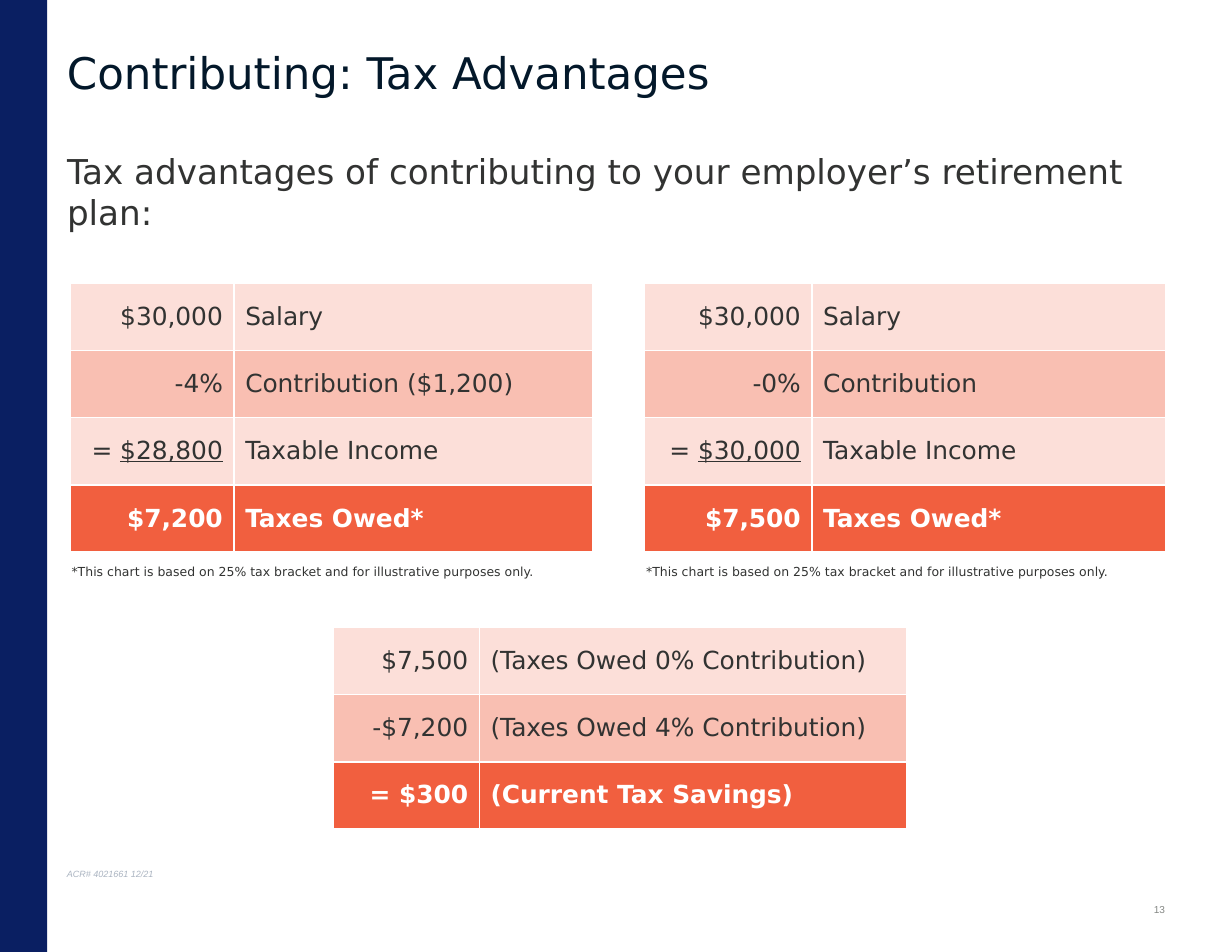
from lxml.etree import SubElement
from pptx import Presentation
from pptx.dml.color import RGBColor
from pptx.enum.shapes import MSO_SHAPE
from pptx.enum.text import MSO_ANCHOR, PP_ALIGN
from pptx.oxml.ns import qn
from pptx.util import Inches, Pt

NAVY = RGBColor(0x0A, 0x1F, 0x62)
INK = RGBColor(0x03, 0x18, 0x2A)
CHARCOAL = RGBColor(0x32, 0x33, 0x32)
GRAY = RGBColor(0x83, 0x86, 0x83)
MIST = RGBColor(0xAA, 0xB4, 0xC1)
WHITE = RGBColor(0xFF, 0xFF, 0xFF)
CORAL = RGBColor(0xF1, 0x5F, 0x3F)
BANDS = [RGBColor(0xFC, 0xDF, 0xD9), RGBColor(0xF9, 0xBF, 0xB2)]
SANS, SMALL_FONT = "DejaVu Sans", "Arial"

SLIDE_WIDTH, SLIDE_HEIGHT = 11, 8.5
BAR_WIDTH = 0.42
MARGIN = 0.5
ROW_HEIGHT = 0.6
TOP_ROW, BOTTOM_ROW, NOTE_ROW = 2.53, 5.6, 4.99

FOOTNOTE = "*This chart is based on 25% tax bracket and for illustrative purposes only."
NOTE_FORMAT = {"name": SANS, "size": Pt(8), "color": CHARCOAL}

# text, (left, top, width, height), font, anchor, paragraph format
TEXTS = [
    ("Contributing: Tax Advantages", (MARGIN, 0.46, 10, 0.42),
     {"name": SANS, "size": Pt(28), "color": INK}, MSO_ANCHOR.MIDDLE, {"line_spacing": 0.9}),
    ("Tax advantages of contributing to your employer’s retirement plan:",
     (MARGIN, 1.29, 9.95, 0.84),
     {"name": SANS, "size": Pt(22), "color": CHARCOAL}, MSO_ANCHOR.TOP, {}),
    (FOOTNOTE, (0.54, NOTE_ROW, 4.75, 0.24), NOTE_FORMAT, MSO_ANCHOR.TOP, {}),
    (FOOTNOTE, (5.67, NOTE_ROW, 4.75, 0.24), NOTE_FORMAT, MSO_ANCHOR.TOP, {}),
    ("ACR# 4021661 12/21", (MARGIN, 7.57, 10, 0.33),
     {"name": SMALL_FONT, "size": Pt(5.8), "color": MIST, "italic": True},
     MSO_ANCHOR.BOTTOM, {}),
    ("13", (10, 7.93, 0.5, 0.38),
     {"name": SMALL_FONT, "size": Pt(6.5), "color": GRAY},
     MSO_ANCHOR.MIDDLE, {"alignment": PP_ALIGN.RIGHT}),
]

# Each row: amount as (text, underlined) runs, then its label; the last row is the total
TABLES = [
    {"at": (0.63, TOP_ROW), "columns": (1.46, 3.2), "rows": [
        ([("$30,000", False)], "Salary"),
        ([("-4%", False)], "Contribution ($1,200)"),
        ([("= ", False), ("$28,800", True)], "Taxable Income"),
        ([("$7,200", False)], "Taxes Owed*")]},
    {"at": (5.75, TOP_ROW), "columns": (1.5, 3.16), "rows": [
        ([("$30,000", False)], "Salary"),
        ([("-0%", False)], "Contribution"),
        ([("= ", False), ("$30,000", True)], "Taxable Income"),
        ([("$7,500", False)], "Taxes Owed*")]},
    {"at": (2.98, BOTTOM_ROW), "columns": (1.3, 3.82), "rows": [
        ([("$7,500", False)], "(Taxes Owed 0% Contribution)"),
        ([("-$7,200", False)], "(Taxes Owed 4% Contribution)"),
        ([("= $300", False)], "(Current Tax Savings)")]},
]


def set_font(font, formats):
    for name, value in formats.items():
        if name == "color":
            font.color.rgb = value
        else:
            setattr(font, name, value)


def add_text(page, text, place, font, anchor, paragraph_format):
    box = page.shapes.add_textbox(*map(Inches, place))
    frame = box.text_frame
    frame.word_wrap = True
    frame.vertical_anchor = anchor
    para = frame.paragraphs[0]
    for name, value in paragraph_format.items():
        setattr(para, name, value)
    span = para.add_run()
    span.text = text
    set_font(span.font, font)


def set_borders(cell, widths):
    """Draw white cell edges; they must come before the fill in the cell's XML."""
    properties = cell._tc.get_or_add_tcPr()
    for position, (side, width) in enumerate(widths.items()):
        line = SubElement(properties, qn(f"a:ln{side}"), w=str(Pt(width)))
        color = SubElement(SubElement(line, qn("a:solidFill")), qn("a:srgbClr"))
        color.set("val", str(WHITE))
        properties.insert(position, line)


def fill_cell(cell, runs, alignment, is_total):
    cell.vertical_anchor = MSO_ANCHOR.MIDDLE
    para = cell.text_frame.paragraphs[0]
    para.alignment = alignment
    for text, underlined in runs:
        span = para.add_run()
        span.text = text
        set_font(span.font, {"name": SANS, "size": Pt(16), "bold": is_total,
                             "underline": underlined,
                             "color": WHITE if is_total else CHARCOAL})


def add_tax_table(page, at, columns, rows):
    size = (sum(columns), ROW_HEIGHT * len(rows))
    table = page.shapes.add_table(len(rows), len(columns), *map(Inches, at + size)).table
    table.first_row = table.horz_banding = False
    for column, width in zip(table.columns, columns):
        column.width = Inches(width)
    total = len(rows) - 1
    for index, (amount, label) in enumerate(rows):
        table.rows[index].height = Inches(ROW_HEIGHT)
        is_total = index == total
        contents = [(amount, PP_ALIGN.RIGHT), ([(label, False)], PP_ALIGN.LEFT)]
        for column, (runs, alignment) in enumerate(contents):
            cell = table.cell(index, column)
            fill_cell(cell, runs, alignment, is_total)
            cell.fill.solid()
            cell.fill.fore_color.rgb = CORAL if is_total else BANDS[index % 2]
            set_borders(cell, {"L": 1, "R": 1, "T": 1.5 if is_total else 1,
                               "B": 1.5 if index == total - 1 else 1})


def main():
    deck = Presentation()
    deck.slide_width, deck.slide_height = Inches(SLIDE_WIDTH), Inches(SLIDE_HEIGHT)
    page = deck.slides.add_slide(deck.slide_layouts[6])
    bar = page.shapes.add_shape(MSO_SHAPE.RECTANGLE, 0, 0, Inches(BAR_WIDTH), deck.slide_height)
    bar.shadow.inherit = False
    bar.fill.solid()
    bar.fill.fore_color.rgb = NAVY
    bar.line.fill.background()
    for text in TEXTS:
        add_text(page, *text)
    for table in TABLES:
        add_tax_table(page, **table)
    deck.save("out.pptx")


if __name__ == "__main__":
    main()
